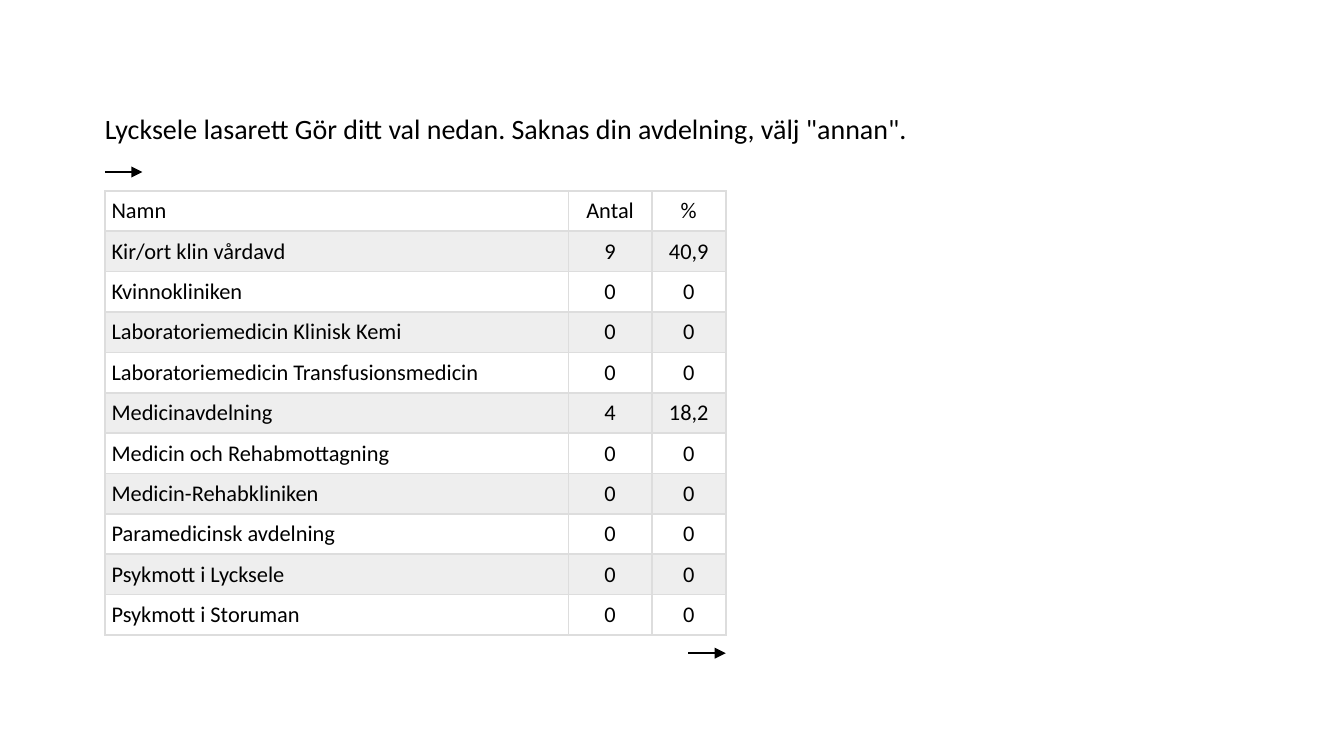
from lxml import etree
from pptx import Presentation
from pptx.dml.color import RGBColor
from pptx.enum.shapes import MSO_CONNECTOR
from pptx.enum.text import MSO_ANCHOR, PP_ALIGN
from pptx.oxml.ns import qn
from pptx.util import Pt

PX = 9144  # 100 px to the inch
LINE = MSO_CONNECTOR.STRAIGHT
MIDDLE = MSO_ANCHOR.MIDDLE
LEFT, CENTER = PP_ALIGN.LEFT, PP_ALIGN.CENTER
FONT = "Calibri"
BLACK, WHITE, STRIPE, BORDER = "000000", "FFFFFF", "EEEEEE", "DDDDDD"
PAD = 5
ARROW_W = 28

TITLE = 'Lycksele lasarett Gör ditt val nedan. Saknas din avdelning, välj "annan".'
COLUMNS = [345, 62, 55]
ROWS = [
    ("Namn", "Antal", "%"),
    ("Kir/ort klin vårdavd", "9", "40,9"),
    ("Kvinnokliniken", "0", "0"),
    ("Laboratoriemedicin Klinisk Kemi", "0", "0"),
    ("Laboratoriemedicin Transfusionsmedicin", "0", "0"),
    ("Medicinavdelning", "4", "18,2"),
    ("Medicin och Rehabmottagning", "0", "0"),
    ("Medicin-Rehabkliniken", "0", "0"),
    ("Paramedicinsk avdelning", "0", "0"),
    ("Psykmott i Lycksele", "0", "0"),
    ("Psykmott i Storuman", "0", "0"),
]


def px(n):
    return int(n * PX)


def rgb(color):
    return RGBColor.from_string(color)


def write(tf, text, size, align=LEFT):
    tf.text = text
    p = tf.paragraphs[0]
    p.alignment = align
    font = p.runs[0].font
    font.name, font.size = FONT, Pt(size)
    font.color.rgb = rgb(BLACK)


def add_title(slide, x, y, w, h):
    tf = slide.shapes.add_textbox(px(x), px(y), px(w), px(h)).text_frame
    tf.word_wrap = True
    tf.vertical_anchor = MIDDLE
    tf.margin_left = tf.margin_right = 0
    tf.margin_top = tf.margin_bottom = px(PAD)
    write(tf, TITLE, 15)


def add_arrow(slide, x, y, w):
    line = slide.shapes.add_connector(LINE, px(x), px(y), px(x + w), px(y))
    line.line.color.rgb = rgb(BLACK)
    line.line.width = Pt(0.75)
    ln = line.line._get_or_add_ln()
    etree.SubElement(ln, qn("a:tailEnd"), type="triangle")
    etree.SubElement(line._element.spPr, qn("a:effectLst"))


def set_borders(cell):
    tcPr = cell._tc.get_or_add_tcPr()
    for i, side in enumerate(("lnL", "lnR", "lnT", "lnB")):
        ln = etree.Element(qn(f"a:{side}"), w=str(Pt(1)))
        fill = etree.SubElement(ln, qn("a:solidFill"))
        etree.SubElement(fill, qn("a:srgbClr"), val=BORDER)
        tcPr.insert(i, ln)  # borders come before the fill


def add_answers(slide, x, y, w, h):
    table = slide.shapes.add_table(len(ROWS), len(COLUMNS),
                                   px(x), px(y), px(w), px(h)).table
    for column, width in zip(table.columns, COLUMNS):
        column.width = px(w * width / sum(COLUMNS))
    for r, values in enumerate(ROWS):
        table.rows[r].height = px(h / len(ROWS))
        for c, value in enumerate(values):
            cell = table.cell(r, c)
            cell.margin_left = cell.margin_right = px(PAD)
            cell.margin_top = cell.margin_bottom = px(PAD)
            cell.fill.solid()
            cell.fill.fore_color.rgb = rgb(STRIPE if r % 2 else WHITE)
            set_borders(cell)
            write(cell.text_frame, value, 12, CENTER if c else LEFT)


def main():
    prs = Presentation()
    prs.slide_width, prs.slide_height = px(1000), px(562.5)
    slide = prs.slides.add_slide(prs.slide_layouts[6])

    # Question, then the answer table between two arrows
    left, table_w = 78, sum(COLUMNS)
    add_title(slide, left, 78, 846, 35)
    add_arrow(slide, left, 128, ARROW_W)
    add_answers(slide, left, 142, table_w, 330)
    add_arrow(slide, left + table_w - ARROW_W, 486, ARROW_W)

    prs.save("out.pptx")


if __name__ == "__main__":
    main()
